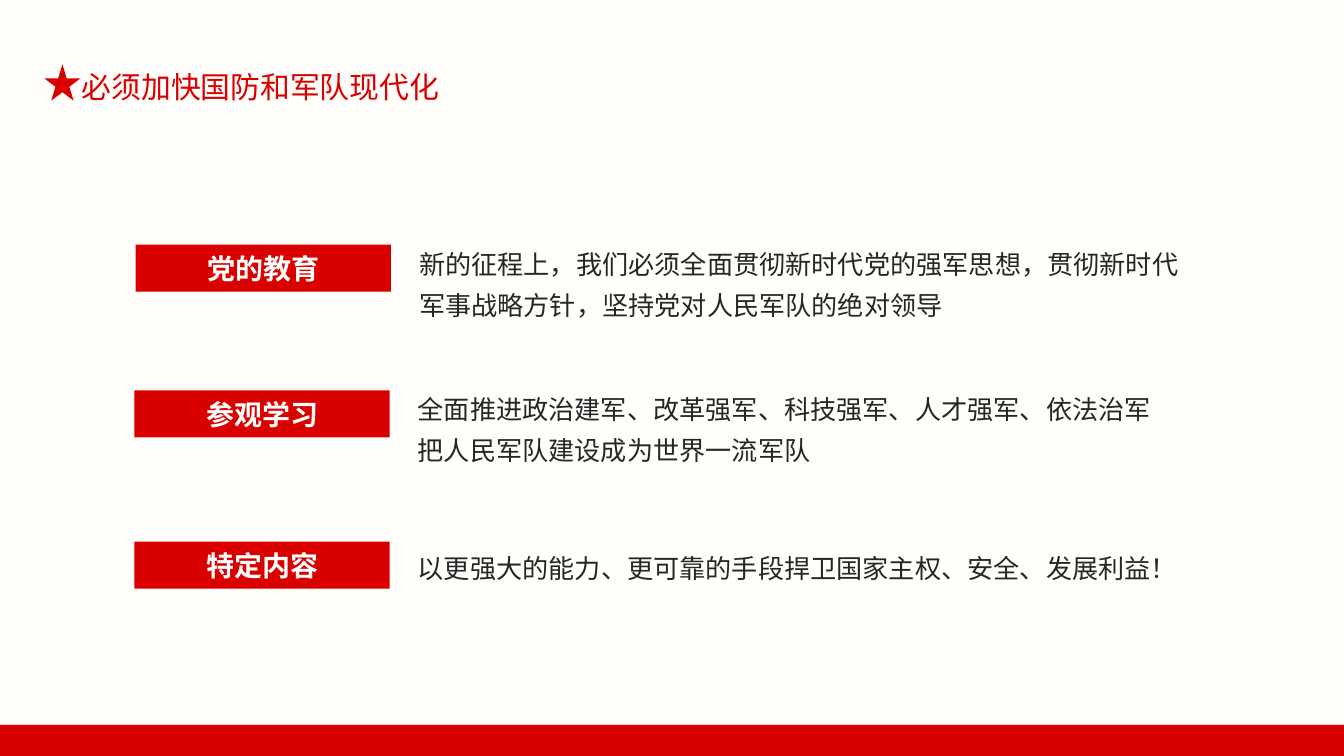
from pptx import Presentation
from pptx.dml.color import RGBColor as RGB
from pptx.enum.shapes import MSO_SHAPE as Shape
from pptx.enum.text import MSO_ANCHOR as Anchor, PP_ALIGN as Align
from pptx.util import Pt

PX = 4572  # 200 px to the inch

THEME = {
    "page": RGB.from_string("FFFEFB"),
    "red": RGB.from_string("DA0000"),
    "title": {"name": "Calibri", "size": Pt(16), "color": "DA0000"},
    "label": {"name": "Noto Sans CJK SC", "size": Pt(15), "bold": True,
              "color": "FFFFFF"},
    "body": {"name": "Noto Sans CJK SC", "size": Pt(14), "color": "262626"},
}

deck = Presentation()
deck.slide_width, deck.slide_height = 2000 * PX, 1125 * PX
slide = deck.slides.add_slide(deck.slide_layouts[6])
slide.background.fill.solid()
slide.background.fill.fore_color.rgb = THEME["page"]


def draw(kind, *box):
    """Add a red shape, or a text box if kind is None."""
    box = [n * PX for n in box]
    if kind is None:
        return slide.shapes.add_textbox(*box)
    shape = slide.shapes.add_shape(kind, *box)
    shape.shadow.inherit = False
    shape.fill.solid()
    shape.fill.fore_color.rgb = THEME["red"]
    shape.line.fill.background()
    return shape


def write(shape, text, style, wrap=True, **layout):
    """Put one styled paragraph into a shape."""
    frame = shape.text_frame
    frame.word_wrap = wrap
    para = frame.paragraphs[0]
    for key, val in layout.items():
        setattr(para, key, val)
    run = para.add_run()
    run.text = text
    for key, val in THEME[style].items():
        if key == "color":
            run.font.color.rgb = RGB.from_string(val)
        else:
            setattr(run.font, key, val)


# Title, footer band and star
write(draw(None, 102, 92, 604, 74), "必须加快国防和军队现代化", "title", wrap=False)
draw(Shape.RECTANGLE, 0, 1079, 2000, 46)
draw(Shape.STAR_5_POINT, 66, 96, 54, 54)

# Rows: label left and top, body top, width and height, then the words
rows = [
    (202, 364, 346, 1200, 142, "党的教育",
     "新的征程上，我们必须全面贯彻新时代党的强军思想，贯彻新时代"
     "军事战略方针，坚持党对人民军队的绝对领导"),
    (200, 581, 562, 1152, 142, "参观学习",
     "全面推进政治建军、改革强军、科技强军、人才强军、依法治军"
     "把人民军队建设成为世界一流军队"),
    (200, 806, 798, 1202, 82, "特定内容",
     "以更强大的能力、更可靠的手段捍卫国家主权、安全、发展利益！"),
]
for left, top, y, wide, high, label, body in rows:
    bar = draw(Shape.RECTANGLE, left, top, 380, 70)
    bar.text_frame.vertical_anchor = Anchor.MIDDLE
    write(bar, label, "label", alignment=Align.CENTER)
    write(draw(None, left + 402, y, wide, high), body, "body", line_spacing=1.3)

deck.save("out.pptx")
